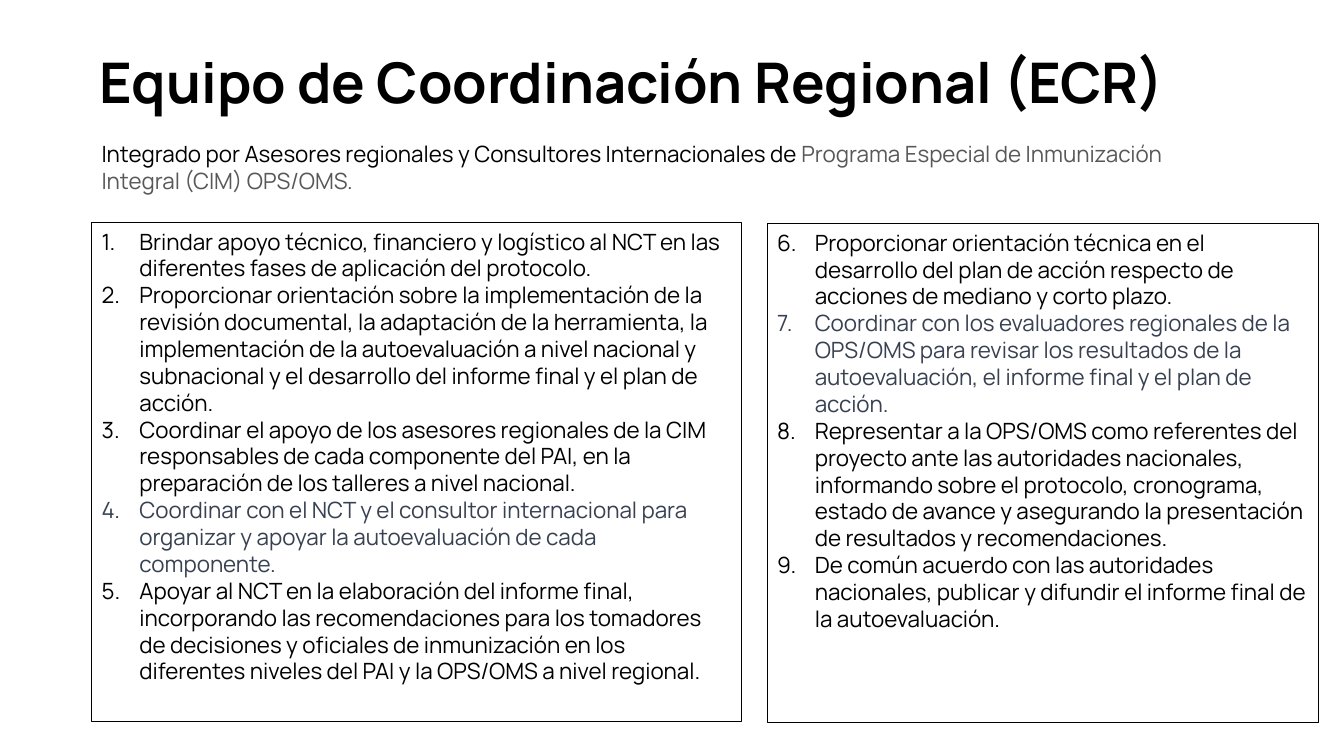
from lxml.etree import SubElement as Sub
from pptx import Presentation
from pptx.dml.color import RGBColor
from pptx.enum.text import MSO_ANCHOR as Anchor, MSO_AUTO_SIZE as Fit, PP_ALIGN as Align
from pptx.oxml.ns import qn
from pptx.util import Cm, Pt

BLACK = RGBColor(0x00, 0x00, 0x00)
GRAY = RGBColor(0x58, 0x58, 0x58)
SLATE = RGBColor(0x37, 0x41, 0x51)
FACE = "Manrope"

LEFT = [
    ("Brindar apoyo técnico, financiero y logístico al NCT en las diferentes fases de "
     "aplicación del protocolo.", BLACK),
    ("Proporcionar orientación sobre la implementación de la revisión documental, la "
     "adaptación de la herramienta, la implementación de la autoevaluación a nivel nacional "
     "y subnacional y el desarrollo del informe final y el plan de acción.", BLACK),
    ("Coordinar el apoyo de los asesores regionales de la CIM responsables de cada "
     "componente del PAI, en la preparación de los talleres a nivel nacional.", BLACK),
    ("Coordinar con el NCT y el consultor internacional para organizar y apoyar la "
     "autoevaluación de cada componente.", SLATE),
    ("Apoyar al NCT en la elaboración del informe final, incorporando las recomendaciones "
     "para los tomadores de decisiones y oficiales de inmunización en los diferentes niveles "
     "del PAI y la OPS/OMS a nivel regional.", BLACK),
]
RIGHT = [
    ("Proporcionar orientación técnica en el desarrollo del plan de acción respecto de "
     "acciones de mediano y corto plazo.", BLACK),
    ("Coordinar con los evaluadores regionales de la OPS/OMS para revisar los resultados de "
     "la autoevaluación, el informe final y el plan de acción.", SLATE),
    ("Representar a la OPS/OMS como referentes del proyecto ante las autoridades nacionales, "
     "informando sobre el protocolo, cronograma, estado de avance y asegurando la "
     "presentación de resultados y recomendaciones.", BLACK),
    ("De común acuerdo con las autoridades nacionales, publicar y difundir el informe final "
     "de la autoevaluación.", BLACK),
]


def write(para, text, size=16, color=BLACK, bold=False, line=1.0, after=0):
    para.alignment = Align.LEFT
    para.line_spacing = line
    para.space_before = Pt(0)
    para.space_after = Pt(after)
    run = para.add_run()
    run.text = text
    font = run.font
    font.name, font.size, font.bold = FACE, Pt(size), bold
    font.color.rgb = color


def place(shape, box):
    shape.left, shape.top, shape.width, shape.height = [Cm(v) for v in box]
    frame = shape.text_frame
    frame.word_wrap = True
    frame.auto_size = Fit.NONE
    return frame


def number(para, start):
    props = para._p.get_or_add_pPr()
    props.set("marL", str(Cm(0.95)))
    props.set("indent", str(Cm(-0.95)))
    Sub(props, qn("a:buFont"), typeface="+mj-lt")
    Sub(props, qn("a:buAutoNum"), type="arabicPeriod", startAt=str(start))


def head(slide, box):
    frame = place(slide.shapes.title, box)
    frame.vertical_anchor = Anchor.MIDDLE
    frame.margin_left = frame.margin_right = Cm(0.19)
    frame.margin_top = frame.margin_bottom = Cm(0.1)
    write(frame.paragraphs[0], "Equipo de Coordinación Regional (ECR)",
          size=40, bold=True, line=0.9)


def intro(slide, box):
    frame = place(slide.shapes.add_textbox(0, 0, 0, 0), box)
    para = frame.paragraphs[0]
    write(para, "Integrado por Asesores regionales y Consultores Internacionales de ", after=7.5)
    write(para, "Programa Especial de Inmunización Integral (CIM) OPS/OMS.",
          color=GRAY, after=7.5)


def tasks(shape, box, items, start):
    frame = place(shape, box)
    frame.vertical_anchor = Anchor.TOP
    shape.line.color.rgb = BLACK
    shape.line.width = Pt(0.75)
    for i, (text, color) in enumerate(items):
        para = frame.add_paragraph() if i else frame.paragraphs[0]
        number(para, start)
        para.font.size = Pt(16)
        write(para, text, color=color)


def main():
    deck = Presentation()
    deck.slide_width, deck.slide_height = Cm(33.87), Cm(19.05)
    slide = deck.slides.add_slide(deck.slide_layouts[3])
    edge = 2.31
    head(slide, (edge, 0.97, 31.17, 2.34))
    intro(slide, (edge, 3.4, 28.96, 1.63))
    tasks(slide.placeholders[1], (edge, 5.61, 16.38, 12.57), LEFT, 1)
    tasks(slide.placeholders[2], (19.33, 5.64, 13.89, 12.57), RIGHT, len(LEFT) + 1)
    deck.save("out.pptx")


if __name__ == "__main__":
    main()
